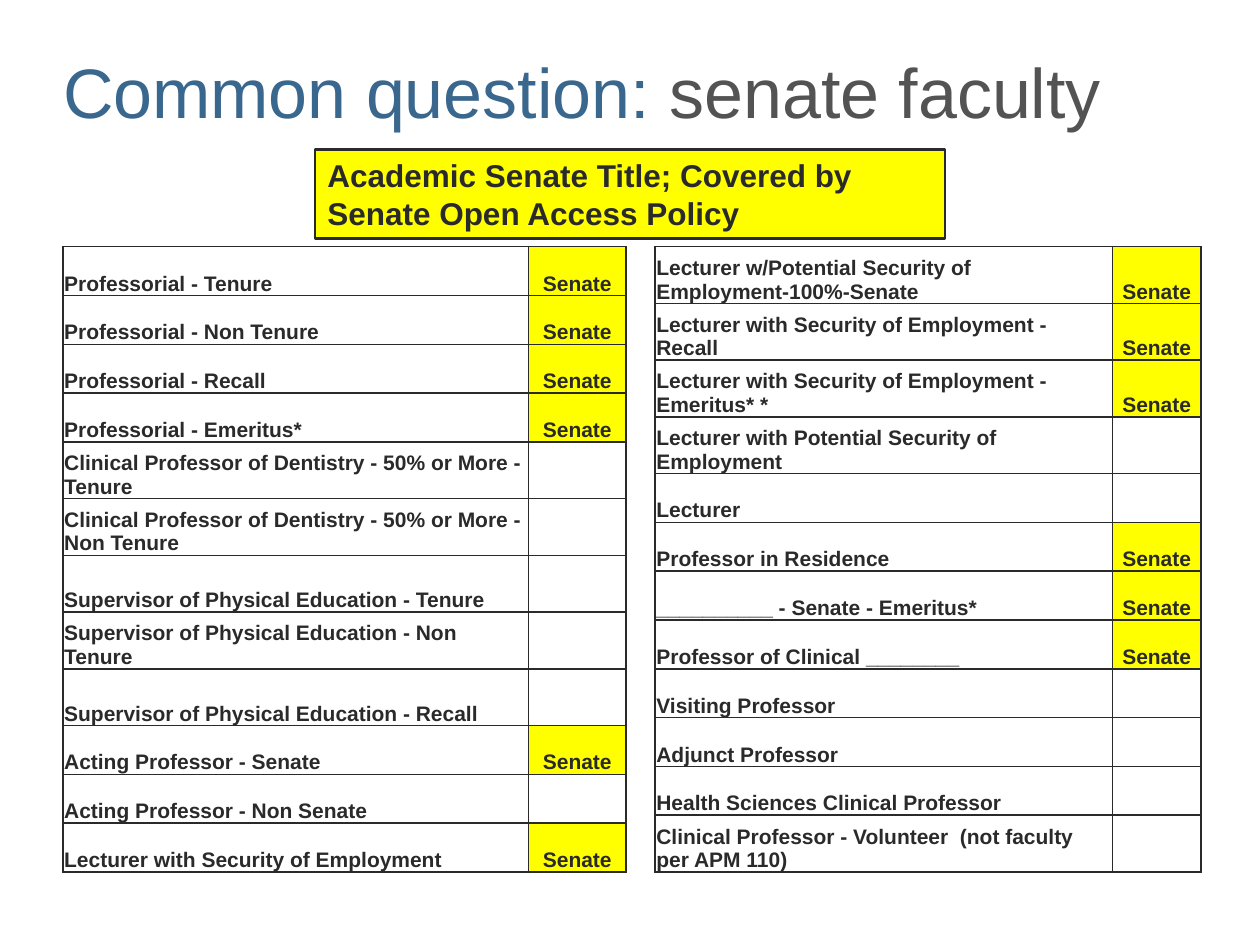
import pptx
import pptx.dml.color
import pptx.enum.shapes
import pptx.enum.text
import pptx.oxml
import pptx.oxml.ns
import pptx.util

Pt = pptx.util.Pt
RGBColor = pptx.dml.color.RGBColor
ANCHOR = pptx.enum.text.MSO_ANCHOR
ALIGN = pptx.enum.text.PP_ALIGN

INK = RGBColor(0x2A, 0x2A, 0x2A)
YELLOW = RGBColor(0xFF, 0xFF, 0x00)
BLUE = RGBColor(0x3A, 0x67, 0x8D)
GREY = RGBColor(0x53, 0x53, 0x53)

SHORT, TALL = 27.9, 32.4
TABLE_TOP = 141

LEFT_ROWS = [
    ("Professorial - Tenure", "Senate", SHORT),
    ("Professorial - Non Tenure", "Senate", SHORT),
    ("Professorial - Recall", "Senate", SHORT),
    ("Professorial - Emeritus*", "Senate", SHORT),
    ("Clinical Professor of Dentistry - 50% or More - Tenure", "", TALL),
    ("Clinical Professor of Dentistry - 50% or More - Non Tenure", "", TALL),
    ("Supervisor of Physical Education - Tenure", "", TALL),
    ("Supervisor of Physical Education - Non Tenure", "", TALL),
    ("Supervisor of Physical Education - Recall", "", TALL),
    ("Acting Professor - Senate", "Senate", SHORT),
    ("Acting Professor - Non Senate", "", SHORT),
    ("Lecturer with Security of Employment", "Senate", SHORT),
]
RIGHT_ROWS = [
    ("Lecturer w/Potential Security of Employment-100%-Senate", "Senate", TALL),
    ("Lecturer with Security of Employment - Recall", "Senate", TALL),
    ("Lecturer with Security of Employment - Emeritus* *", "Senate", TALL),
    ("Lecturer with Potential Security of Employment", "", TALL),
    ("Lecturer", "", SHORT),
    ("Professor in Residence", "Senate", SHORT),
    ("__________ - Senate - Emeritus*", "Senate", SHORT),
    ("Professor of Clinical ________", "Senate", SHORT),
    ("Visiting Professor", "", SHORT),
    ("Adjunct Professor", "", SHORT),
    ("Health Sciences Clinical Professor", "", SHORT),
    ("Clinical Professor - Volunteer  (not faculty per APM 110)", "", TALL),
]


def add_text(p, text, size=12, color=INK, bold=True, align=ALIGN.LEFT):
    p.alignment = align
    r = p.add_run()
    r.text = text
    r.font.name = "Arial"
    r.font.size = Pt(size)
    r.font.bold = bold
    r.font.color.rgb = color


def format_cell(cell, filled):
    cell.vertical_anchor = ANCHOR.BOTTOM
    cell.margin_left = cell.margin_right = cell.margin_top = Pt(0.7)
    cell.margin_bottom = 0
    tc_pr = cell._tc.get_or_add_tcPr()
    for side in ("lnL", "lnR", "lnT", "lnB"):
        tc_pr.append(pptx.oxml.parse_xml(
            f'<a:{side} {pptx.oxml.ns.nsdecls("a")} w="{Pt(1)}">'
            f'<a:solidFill><a:srgbClr val="{INK}"/></a:solidFill></a:{side}>'))
    if filled:
        cell.fill.solid()
        cell.fill.fore_color.rgb = YELLOW
    else:
        cell.fill.background()


prs = pptx.Presentation()
prs.slide_width, prs.slide_height = Pt(720), Pt(540)
s = prs.slides.add_slide(prs.slide_layouts[5])

title = s.shapes.title
title.left, title.top, title.width, title.height = Pt(36), Pt(36), Pt(651), Pt(39.6)
tf = title.text_frame
tf.margin_left = tf.margin_right = tf.margin_top = tf.margin_bottom = 0
tf.vertical_anchor = ANCHOR.TOP
tf.auto_size = pptx.enum.text.MSO_AUTO_SIZE.NONE
p = tf.paragraphs[0]
p.line_spacing = 0.82
p.space_before = Pt(3.6)
add_text(p, "Common question: ", size=40, color=BLUE, bold=False)
add_text(p, "senate faculty", size=40, color=GREY, bold=False)

sp = s.shapes.add_shape(pptx.enum.shapes.MSO_SHAPE.RECTANGLE, Pt(180), Pt(85.5), Pt(360), Pt(51))
sp.shadow.inherit = False
sp.fill.solid()
sp.fill.fore_color.rgb = YELLOW
sp.line.color.rgb = INK
sp.line.width = Pt(1.5)
tf = sp.text_frame
tf.word_wrap = True
tf.vertical_anchor = ANCHOR.TOP
add_text(tf.paragraphs[0], "Academic Senate Title; Covered by Senate Open Access Policy", size=18)

for left, widths, rows in ((36, (266.1, 55.6), LEFT_ROWS), (374.4, (261.4, 50.4), RIGHT_ROWS)):
    height = sum(row[2] for row in rows)
    table = s.shapes.add_table(len(rows), 2, Pt(left), Pt(TABLE_TOP), Pt(sum(widths)), Pt(height)).table
    table.first_row = table.horz_banding = False
    for column, width in zip(table.columns, widths):
        column.width = Pt(width)
    for i, (label, status, row_height) in enumerate(rows):
        table.rows[i].height = Pt(row_height)
        format_cell(table.cell(i, 0), False)
        format_cell(table.cell(i, 1), bool(status))
        add_text(table.cell(i, 0).text_frame.paragraphs[0], label)
        if status:
            add_text(table.cell(i, 1).text_frame.paragraphs[0], status, align=ALIGN.CENTER)

prs.save("out.pptx")
